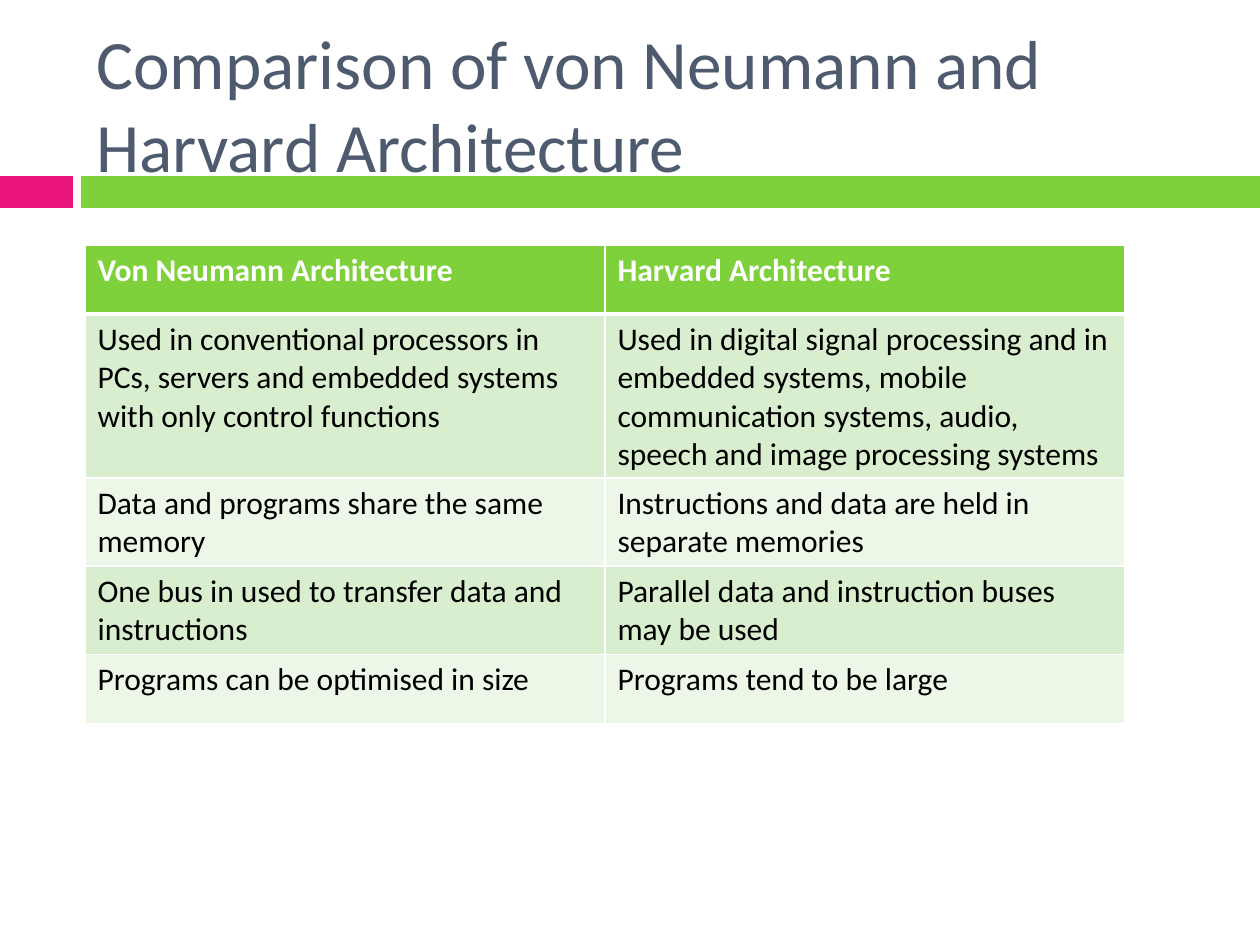
"""Build a slide comparing von Neumann and Harvard architecture in a table."""
import pptx
import pptx.dml.color
import pptx.enum.shapes
import pptx.enum.text
import pptx.oxml
import pptx.oxml.ns
import pptx.util

TITLE = "Comparison of von Neumann and Harvard Architecture"
ROWS = [
    ("Von Neumann Architecture", "Harvard Architecture"),
    ("Used in conventional processors in PCs, servers and embedded systems with only control functions",
     "Used in digital signal processing and in embedded systems, mobile communication systems, "
     "audio, speech and image processing systems"),
    ("Data and programs share the same memory",
     "Instructions and data are held in separate memories"),
    ("One bus in used to transfer data and instructions",
     "Parallel data and instruction buses may be used"),
    ("Programs can be optimised in size", "Programs tend to be large"),
]
FONT = "Calibri"
GREEN, PINK, SLATE, WHITE, BLACK = "7FD13B", "EA157A", "4E5B6F", "FFFFFF", "000000"
BANDS = ["D8EECE", "ECF7E8"]
BARS = [(0, 73, PINK), (81, 1179, GREEN)]
BAR_TOP, BAR_HEIGHT = 176, 32
TITLE_BOX = (84, 31, 1124, 136)
TABLE_LEFT, TABLE_TOP, COLUMN_WIDTH, ROW_HEIGHT = 85, 245, 520, 69


def px(length):
    return pptx.util.Emu(round(length * 914400 / 126))


def colour(value):
    return pptx.dml.color.RGBColor.from_string(value)


def paint(target, value):
    target.fill.solid()
    target.fill.fore_color.rgb = colour(value)


def style(para, size, value, bold=False):
    font = para.font
    font.name, font.size, font.bold = FONT, pptx.util.Pt(size), bold
    font.color.rgb = colour(value)


def add_borders(cell, widths):
    properties = cell._tc.get_or_add_tcPr()
    for index, (side, width) in enumerate(widths.items()):
        line = pptx.oxml.parse_xml(
            f'<a:{side} {pptx.oxml.ns.nsdecls("a")} w="{pptx.util.Pt(width)}">'
            f'<a:solidFill><a:srgbClr val="{WHITE}"/></a:solidFill></a:{side}>')
        properties.insert(index, line)


def add_bars(page):
    for left, width, value in BARS:
        bar = page.shapes.add_shape(pptx.enum.shapes.MSO_SHAPE.RECTANGLE,
                                    px(left), px(BAR_TOP), px(width), px(BAR_HEIGHT))
        bar.shadow.inherit = False
        paint(bar, value)
        bar.line.fill.background()


def add_title(page):
    frame = page.shapes.add_textbox(*map(px, TITLE_BOX)).text_frame
    frame.word_wrap = True
    frame.vertical_anchor = pptx.enum.text.MSO_ANCHOR.MIDDLE
    frame.margin_top, frame.margin_bottom = px(8), 0
    frame.text = TITLE
    style(frame.paragraphs[0], 39.6, SLATE)


def add_comparison(page):
    columns = len(ROWS[0])
    table = page.shapes.add_table(
        len(ROWS), columns, px(TABLE_LEFT), px(TABLE_TOP),
        px(COLUMN_WIDTH * columns), px(ROW_HEIGHT * len(ROWS))).table
    for row, texts in enumerate(ROWS):
        header = row == 0
        for column, text in enumerate(texts):
            cell = table.cell(row, column)
            cell.text = text
            style(cell.text_frame.paragraphs[0], 18, WHITE if header else BLACK, header)
            paint(cell, GREEN if header else BANDS[(row - 1) % 2])
            add_borders(cell, {"lnL": 1, "lnR": 1, "lnT": 3 if row == 1 else 1,
                               "lnB": 3 if header else 1})


def main():
    deck = pptx.Presentation()
    deck.slide_width, deck.slide_height = px(1260), px(945)
    page = deck.slides.add_slide(deck.slide_layouts[6])
    add_bars(page)
    add_title(page)
    add_comparison(page)
    deck.save("out.pptx")


if __name__ == "__main__":
    main()
